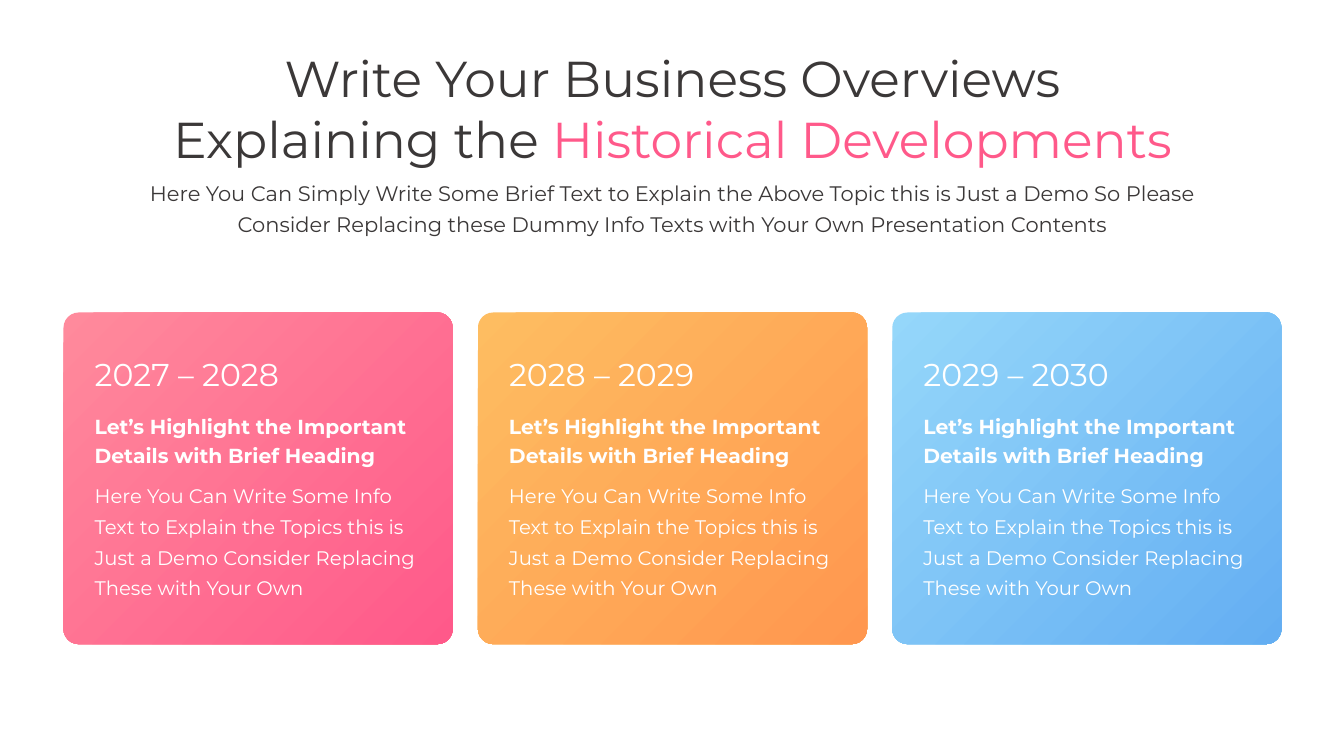
from pptx import Presentation
from pptx.dml.color import RGBColor
from pptx.enum.shapes import MSO_SHAPE
from pptx.enum.text import MSO_AUTO_SIZE, PP_ALIGN
from pptx.oxml import parse_xml
from pptx.oxml.ns import nsdecls, qn
from pptx.util import Inches, Pt

ROUNDED = MSO_SHAPE.ROUNDED_RECTANGLE
GROW = MSO_AUTO_SIZE.SHAPE_TO_FIT_TEXT
LEFT, CENTER = PP_ALIGN.LEFT, PP_ALIGN.CENTER

FONT = "Montserrat"
DARK, WHITE = "3B3838", "FFFFFF"
PINK = ("FF598A", "FF8A9C")
ORANGE = ("FF974F", "FEBD61")
BLUE = ("64AEF2", "95D7FA")

MARGIN, PITCH = 0.63, 4.11
CARD_TOP, CARD_W, CARD_H = 3.1, 3.86, 3.29
PAD = 0.21
YEARS_ROW, HEADING_ROW, BODY_ROW = 0.37, 0.91, 1.58

TITLE = [["Write Your Business Overviews"],
         ["Explaining the ", ("Historical Developments", PINK)]]
SUBTITLE = [
    ["Here You Can Simply Write Some Brief Text to Explain the Above Topic this is Just a Demo So Please"],
    ["Consider Replacing these Dummy Info Texts with Your Own Presentation Contents"],
]
HEADING = [["Let’s Highlight the Important\nDetails with Brief Heading"]]
BODY = [["Here You Can Write Some Info"],
        ["Text to Explain the Topics this is"],
        ["Just a Demo Consider Replacing"],
        ["These with Your Own"]]
CARDS = [("2027 – 2028", PINK), ("2028 – 2029", ORANGE), ("2029 – 2030", BLUE)]


def rgb(value):
    return RGBColor.from_string(value)


def set_gradient(fill, colors, angle=0):
    fill.gradient()
    fill.gradient_angle = angle
    for stop, color in zip(fill.gradient_stops, colors):
        stop.color.rgb = rgb(color)


def make_radial(sp):
    lin = sp._element.spPr.find(qn("a:gradFill")).find(qn("a:lin"))
    path = parse_xml(
        f'<a:path {nsdecls("a")} path="circle">'
        '<a:fillToRect l="100000" t="100000"/></a:path>')
    lin.getparent().replace(lin, path)


def add_run(p, text, color, size, bold):
    r = p.add_run()
    r.text = text
    formats = {"name": FONT, "size": Pt(size), "bold": bold}
    for name, value in formats.items():
        setattr(r.font, name, value)
    if isinstance(color, tuple):
        set_gradient(r.font.fill, color, 180)
    else:
        r.font.color.rgb = rgb(color)


def add_text(s, box, lines, size, color=WHITE, align=LEFT, spacing=None, bold=False):
    tf = s.shapes.add_textbox(*map(Inches, box)).text_frame
    tf.word_wrap = False
    tf.auto_size = GROW
    for i, line in enumerate(lines):
        p = tf.add_paragraph() if i else tf.paragraphs[0]
        p.alignment = align
        if spacing:
            p.line_spacing = Pt(spacing)
        for part in line:
            text, run_color = part if isinstance(part, tuple) else (part, color)
            for j, piece in enumerate(text.split("\n")):
                if j:
                    p.add_line_break()
                add_run(p, piece, run_color, size, bold)


def add_card(s, column, years, colors):
    left = MARGIN + column * PITCH
    sp = s.shapes.add_shape(
        ROUNDED, *map(Inches, (left, CARD_TOP, CARD_W, CARD_H)))
    sp.adjustments[0] = 0.046
    sp.shadow.inherit = False
    sp.line.fill.background()
    set_gradient(sp.fill, colors)
    make_radial(sp)

    x, w = left + PAD, 3.43
    add_text(s, (x, CARD_TOP + HEADING_ROW, w, 0.67), HEADING, 14.5, spacing=21, bold=True)
    add_text(s, (x, CARD_TOP + YEARS_ROW, 2.15, 0.48), [[years]], 22.5)
    add_text(s, (x, CARD_TOP + BODY_ROW, w, 1.31), BODY, 14, spacing=22)


def main():
    prs = Presentation()
    prs.slide_width, prs.slide_height = Inches(13.33), Inches(7.5)
    s = prs.slides.add_slide(prs.slide_layouts[6])
    add_text(s, (1.11, 0.42, 11.12, 1.31), TITLE, 36, DARK, CENTER)
    for column, (years, colors) in enumerate(CARDS):
        add_card(s, column, years, colors)
    add_text(s, (1.24, 1.69, 10.86, 0.69), SUBTITLE, 15, DARK, CENTER, 22)
    prs.save("out.pptx")


if __name__ == "__main__":
    main()
